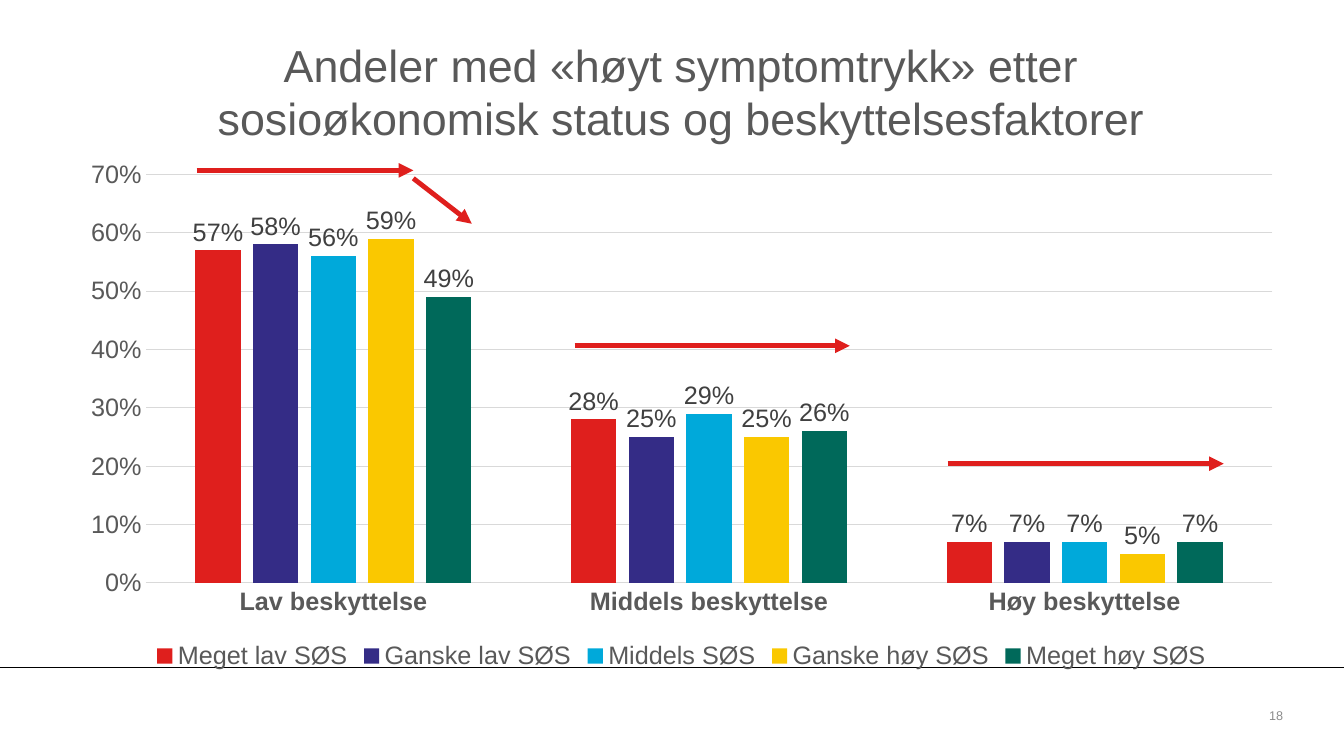
from dataclasses import dataclass

from pptx import Presentation
from pptx.chart.data import CategoryChartData
from pptx.dml.color import RGBColor
from pptx.enum.chart import XL_CHART_TYPE as ChartType, XL_LABEL_POSITION as LabelPosition
from pptx.enum.chart import XL_LEGEND_POSITION as LegendPosition, XL_TICK_MARK as TickMark
from pptx.enum.shapes import MSO_CONNECTOR as Connector
from pptx.enum.text import MSO_ANCHOR as Anchor, MSO_AUTO_SIZE as AutoSize, PP_ALIGN as Align
from pptx.oxml import parse_xml
from pptx.oxml.ns import nsdecls, qn
from pptx.util import Pt


@dataclass(frozen=True)
class Theme:
    font: str = "Arial"
    text: str = "595959"
    label: str = "404040"
    grid: str = "D9D9D9"
    rule: str = "000000"
    arrow: str = "DF1F1D"
    number: str = "8C8C8C"
    title_size: float = 32
    chart_size: float = 18
    number_size: float = 9
    thin: float = 0.75
    thick: float = 3.5


THEME = Theme()
SLIDE_WIDTH, SLIDE_HEIGHT = 960, 540
CHART_BOX = (46.8, 11.5, 879.8, 470.9)
TITLE = "Andeler med «høyt symptomtrykk» etter sosioøkonomisk status og beskyttelsesfaktorer"
CATEGORIES = ["Lav beskyttelse", "Middels beskyttelse", "Høy beskyttelse"]
SERIES = [
    ("Meget lav SØS", "DF1F1D", (0.57, 0.28, 0.07)),
    ("Ganske lav SØS", "342C86", (0.58, 0.25, 0.07)),
    ("Middels SØS", "00A9DA", (0.56, 0.29, 0.07)),
    ("Ganske høy SØS", "FAC800", (0.59, 0.25, 0.05)),
    ("Meget høy SØS", "00695A", (0.49, 0.26, 0.07)),
]
# Plot area as shares of the chart's width and height
PLOT_SHARES = {"x": 0.065, "y": 0.24, "w": 0.915, "h": 0.62}
# Trend arrows: start and end, relative to the chart box
TRENDS = [
    ((93.6, 110.2), (248.4, 110.2)),
    ((248.4, 115.9), (290.2, 148.3)),
    ((363.6, 235.5), (560.2, 235.5)),
    ((630, 319.7), (827.3, 319.7)),
]


def set_all(target, values):
    for name, value in values.items():
        setattr(target, name, value)


def set_font(font, size, color, bold=False):
    set_all(font, {"name": THEME.font, "size": Pt(size), "bold": bold})
    font.color.rgb = RGBColor.from_string(color)


def set_line(line, color, width):
    line.color.rgb = RGBColor.from_string(color)
    line.width = Pt(width)


def fill_text(shape, text, size, color, align):
    frame = shape.text_frame
    set_all(frame, {
        "margin_left": 0, "margin_right": 0, "margin_top": 0, "margin_bottom": 0,
        "word_wrap": True, "auto_size": AutoSize.NONE, "vertical_anchor": Anchor.MIDDLE,
    })
    para = frame.paragraphs[0]
    para.alignment = align
    span = para.add_run()
    span.text = text
    set_font(span.font, size, color)


def add_line(page, start, end, color, width, arrow=False):
    line = page.shapes.add_connector(Connector.STRAIGHT, *map(Pt, start + end))
    set_line(line.line, color, width)
    if arrow:
        line.line._get_or_add_ln().append(
            parse_xml(f'<a:tailEnd {nsdecls("a")} type="triangle"/>'))
    line.element.spPr.append(parse_xml(f'<a:effectLst {nsdecls("a")}/>'))


def place_title(page, box):
    left, top, width, _ = box
    title_width = 730
    title = page.shapes.title
    set_all(title, {
        "left": Pt(left + (width - title_width) / 2), "top": Pt(top + 16.5),
        "width": Pt(title_width), "height": Pt(74),
    })
    fill_text(title, TITLE, THEME.title_size, THEME.text, Align.CENTER)


def place_chart(page, box):
    data = CategoryChartData(number_format="0%")
    data.categories = CATEGORIES
    for name, _, values in SERIES:
        data.add_series(name, values)
    chart = page.shapes.add_chart(
        ChartType.COLUMN_CLUSTERED, *map(Pt, box), data).chart
    chart.has_title = False
    set_font(chart.font, THEME.chart_size, THEME.text)
    clear_background(chart)
    fix_plot_area(chart)
    format_axes(chart)
    format_columns(chart.plots[0])
    chart.has_legend = True
    set_all(chart.legend, {"position": LegendPosition.BOTTOM, "include_in_layout": False})
    set_font(chart.legend.font, THEME.chart_size, THEME.text)


def clear_background(chart):
    chart.element.find(qn("c:txPr")).addprevious(parse_xml(
        f'<c:spPr {nsdecls("c", "a")}><a:noFill/><a:ln><a:noFill/></a:ln></c:spPr>'))


def fix_plot_area(chart):
    area = chart.element.find(".//" + qn("c:plotArea"))
    for layout in area.findall(qn("c:layout")):
        area.remove(layout)
    modes = "".join(f'<c:{axis}Mode val="edge"/>' for axis in "xy")
    shares = "".join(f'<c:{side} val="{share}"/>' for side, share in PLOT_SHARES.items())
    area.insert(0, parse_xml(
        f'<c:layout {nsdecls("c")}><c:manualLayout><c:layoutTarget val="inner"/>'
        f'{modes}{shares}</c:manualLayout></c:layout>'))


def format_axes(chart):
    groups, percent = chart.category_axis, chart.value_axis
    for axis in (groups, percent):
        set_all(axis, {"major_tick_mark": TickMark.NONE, "minor_tick_mark": TickMark.NONE})
        set_font(axis.tick_labels.font, THEME.chart_size, THEME.text, bold=axis is groups)
    set_line(groups.format.line, THEME.grid, THEME.thin)
    set_all(percent, {
        "minimum_scale": 0, "maximum_scale": 0.7, "major_unit": 0.1,
        "has_major_gridlines": True,
    })
    percent.format.line.fill.background()
    set_line(percent.major_gridlines.format.line, THEME.grid, THEME.thin)
    set_all(percent.tick_labels, {"number_format": "0%", "number_format_is_linked": False})


def format_columns(plot):
    set_all(plot, {"gap_width": 219, "overlap": -27, "vary_by_categories": False})
    for series, (_, color, _) in zip(plot.series, SERIES):
        series.format.fill.solid()
        series.format.fill.fore_color.rgb = RGBColor.from_string(color)
        labels = series.data_labels
        set_all(labels, {
            "show_value": True, "number_format": "0%", "number_format_is_linked": False,
            "position": LabelPosition.OUTSIDE_END,
        })
        set_font(labels.font, THEME.chart_size, THEME.label)


def place_trends(page, box):
    left, top = box[:2]
    for ends in TRENDS:
        start, end = [(left + x, top + y) for x, y in ends]
        add_line(page, start, end, THEME.arrow, THEME.thick, arrow=True)


def place_footer(page, box):
    left, top, width, _ = box
    add_line(page, (left, top), (left + width, top), THEME.rule, THEME.thin)
    number = page.shapes.add_textbox(
        Pt(left + 906.5), Pt(top + 28.8), Pt(44), Pt(11.5))
    fill_text(number, "18", THEME.number_size, THEME.number, Align.LEFT)


def main():
    deck = Presentation()
    set_all(deck, {"slide_width": Pt(SLIDE_WIDTH), "slide_height": Pt(SLIDE_HEIGHT)})
    page = deck.slides.add_slide(deck.slide_layouts.get_by_name("Title Only"))
    place_footer(page, (0, 476.6, SLIDE_WIDTH, 63.4))
    place_chart(page, CHART_BOX)
    place_title(page, CHART_BOX)
    place_trends(page, CHART_BOX)
    deck.save("out.pptx")


if __name__ == "__main__":
    main()
